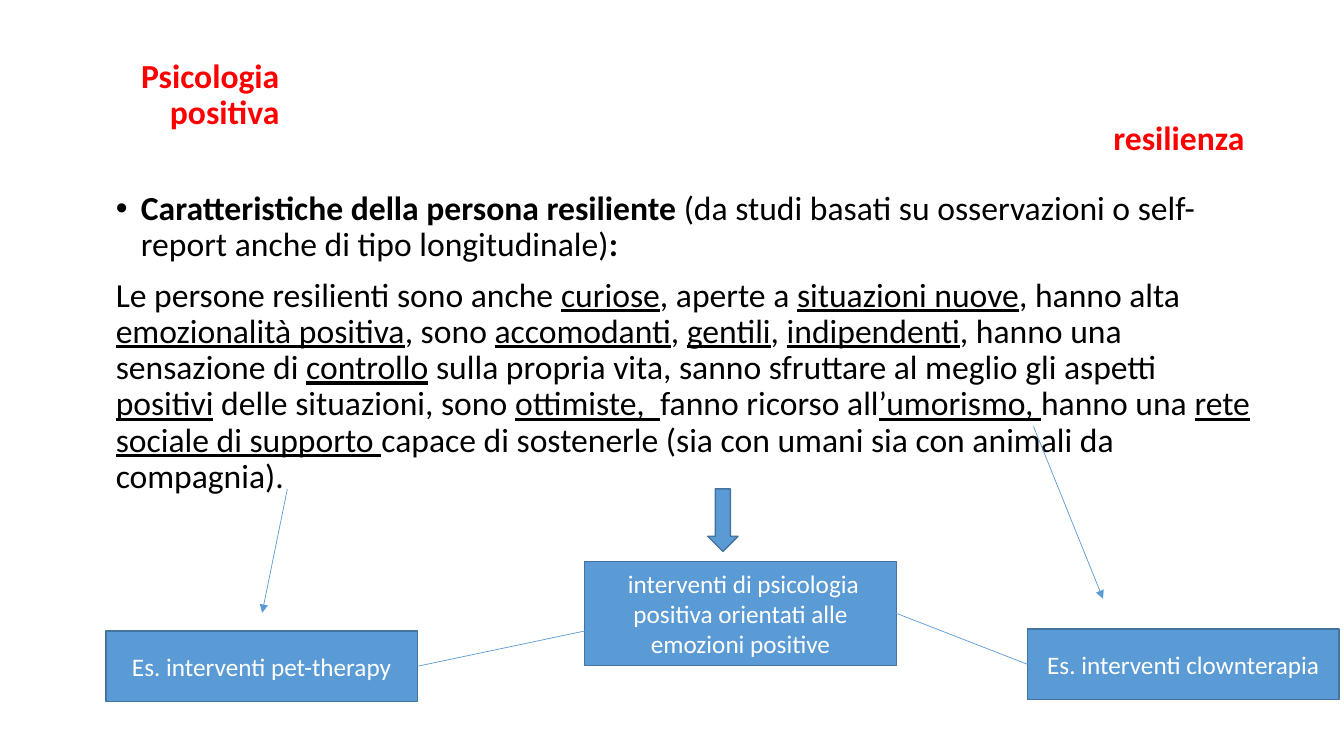
import pptx
import pptx.util
import pptx.dml.color
import pptx.enum.shapes
import pptx.enum.text
import pptx.oxml.ns
from lxml import etree
from dataclasses import dataclass

PX = 9144  # one px is a hundredth of an inch


@dataclass(frozen=True)
class Theme:
    font: str = "Calibri"
    ink: str = "000000"
    red: str = "FF0000"
    white: str = "FFFFFF"
    blue: str = "5B9BD5"
    edge: str = "43739E"
    body_size: int = 24
    label_size: int = 18
    spacer_size: int = 44
    leading: float = 0.9


theme = Theme()
rgb = pptx.dml.color.RGBColor.from_string
qn = pptx.oxml.ns.qn
shapes_enum = pptx.enum.shapes
Align = pptx.enum.text.PP_ALIGN
Anchor = pptx.enum.text.MSO_ANCHOR


def add_span(para, text, size, color, bold=False, underline=False):
    span = para.add_run()
    span.text = text
    span.font.name = theme.font
    span.font.size = pptx.util.Pt(size)
    span.font.color.rgb = rgb(color)
    span.font.bold = bold
    span.font.underline = underline


def add_block(shape_kind, left, top, width, height):
    block = page.shapes.add_shape(shape_kind, left * PX, top * PX, width * PX, height * PX)
    block.shadow.inherit = False
    block.fill.solid()
    block.fill.fore_color.rgb = rgb(theme.blue)
    block.line.color.rgb = rgb(theme.edge)
    block.line.width = pptx.util.Pt(1)
    return block


deck = pptx.Presentation()
deck.slide_width = 1333 * PX
deck.slide_height = 750 * PX
page = deck.slides.add_slide(deck.slide_layouts[6])

# Body: bulleted heading, then a paragraph with key words between underscores
body = page.shapes.add_textbox(105 * PX, 185 * PX, 1150 * PX, 476 * PX)
body.text_frame.word_wrap = True
heading = body.text_frame.paragraphs[0]
heading.line_spacing = theme.leading
properties = heading._p.get_or_add_pPr()
properties.set("marL", str(25 * PX))
properties.set("indent", str(-25 * PX))
etree.SubElement(properties, qn("a:buFont")).set("typeface", "Arial")
etree.SubElement(properties, qn("a:buChar")).set("char", "•")
for text, bold in [
    ("Caratteristiche della persona resiliente ", True),
    ("(da studi basati su osservazioni o self-report anche di tipo longitudinale)", False),
    (":", True),
]:
    add_span(heading, text, theme.body_size, theme.ink, bold)

traits = (
    "Le persone resilienti sono anche _curiose_, aperte a _situazioni nuove_, hanno alta "
    "_emozionalità positiva_, sono _accomodanti_, _gentili_, _indipendenti_, hanno una "
    "sensazione di _controllo_ sulla propria vita, sanno sfruttare al meglio gli aspetti "
    "_positivi_ delle situazioni, sono _ottimiste,  _fanno ricorso all_’umorismo, _hanno una "
    "_rete sociale di supporto _capace di sostenerle (sia con umani sia con animali da compagnia)."
)
para = body.text_frame.add_paragraph()
para.line_spacing = theme.leading
para.space_before = pptx.util.Pt(10)
for index, text in enumerate(traits.split("_")):
    add_span(para, text, theme.body_size, theme.ink, underline=index % 2 == 1)

# Intervention boxes
boxes = {}
for name, text, left, top, width, height in [
    ("clown", "Es. interventi clownterapia", 1019, 624, 309, 70),
    ("pet", "Es. interventi pet-therapy", 105, 626, 309, 70),
    ("centre", " interventi di psicologia positiva orientati alle emozioni positive", 580, 557, 309, 103),
]:
    box = add_block(shapes_enum.MSO_SHAPE.RECTANGLE, left, top, width, height)
    box.text_frame.word_wrap = True
    box.text_frame.vertical_anchor = Anchor.MIDDLE
    para = box.text_frame.paragraphs[0]
    para.alignment = Align.CENTER
    add_span(para, text, theme.label_size, theme.white)
    boxes[name] = box

add_block(shapes_enum.MSO_SHAPE.DOWN_ARROW, 702, 485, 30, 62)

# Thin lines: start, end, arrowhead, joined box and side at each end
for start, end, arrow, begin_join, end_join in [
    ((1025, 423), (1094, 594), True, None, None),
    ((285, 485), (260, 608), True, None, None),
    ((580, 626), (414, 661), False, None, ("pet", 3)),
    ((889, 608), (1019, 659), False, ("centre", 3), ("clown", 1)),
]:
    line = page.shapes.add_connector(
        shapes_enum.MSO_CONNECTOR.STRAIGHT, *[value * PX for value in start + end])
    line.line.color.rgb = rgb(theme.blue)
    line.line.width = pptx.util.Pt(0.5)
    if arrow:
        etree.SubElement(line.line._get_or_add_ln(), qn("a:tailEnd")).set("type", "triangle")
    etree.SubElement(line._element.spPr, qn("a:effectLst"))
    if begin_join:
        line.begin_connect(boxes[begin_join[0]], begin_join[1])
    if end_join:
        line.end_connect(boxes[end_join[0]], end_join[1])

# Red titles; the large space sets the line height of the right one
for text, spacer, left, top, width in [
    ("resilienza", " ", 108, 57, 1150),
    ("Psicologia positiva", "", 41, 22, 246),
]:
    title = page.shapes.add_textbox(left * PX, top * PX, width * PX, 145 * PX)
    title.text_frame.word_wrap = True
    title.text_frame.vertical_anchor = Anchor.MIDDLE
    para = title.text_frame.paragraphs[0]
    para.alignment = Align.RIGHT
    para.line_spacing = theme.leading
    add_span(para, text, theme.body_size, theme.red, bold=True)
    if spacer:
        add_span(para, spacer, theme.spacer_size, theme.ink)

deck.save("out.pptx")
